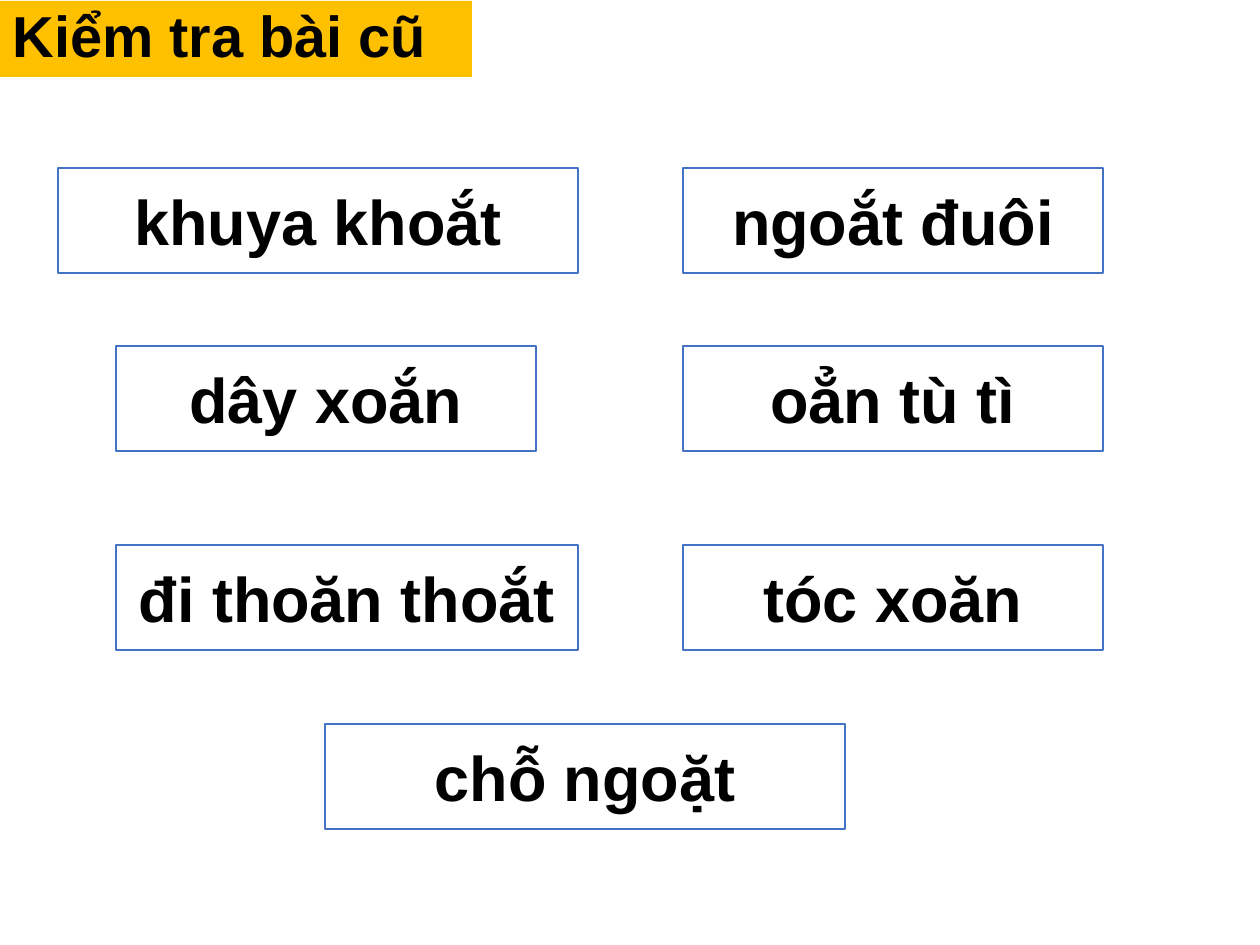
from pptx import Presentation
from pptx.dml.color import RGBColor
from pptx.enum.shapes import MSO_SHAPE
from pptx.enum.text import MSO_ANCHOR, PP_ALIGN
from pptx.util import Emu, Pt

PX_PER_INCH = 126
WORD_HEIGHT = 105
RIGHT_COLUMN = 683
ROW_TOPS = (168, 346, 545)
LEFT_WORDS = (("khuya khoắt", 58, 520), ("dây xoắn", 116, 420), ("đi thoăn thoắt", 116, 462))
RIGHT_WORDS = ("ngoắt đuôi", "oẳn tù tì", "tóc xoăn")

TITLE_FORMAT = {"alignment": PP_ALIGN.LEFT, "line_spacing": 0.9}
WORD_FORMAT = {"alignment": PP_ALIGN.CENTER}


def px(length):
    return Emu(round(length * 914400 / PX_PER_INCH))


def color(hex_value):
    return RGBColor.from_string(hex_value)


def apply_format(target, values):
    for name, value in values.items():
        setattr(target, name, value)


def add_box(slide, text, bounds, fill, size, paragraph_format, anchor):
    """Add a filled rectangle without a line, holding one bold paragraph."""
    box = slide.shapes.add_shape(MSO_SHAPE.RECTANGLE, *map(px, bounds))
    box.shadow.inherit = False
    box.fill.solid()
    box.fill.fore_color.rgb = color(fill)
    box.line.fill.background()
    apply_format(box.text_frame, {"word_wrap": True, "vertical_anchor": anchor})
    paragraph = box.text_frame.paragraphs[0]
    apply_format(paragraph, paragraph_format)
    run = paragraph.add_run()
    run.text = text
    apply_format(run.font, {"name": "Arial", "size": Pt(size), "bold": True})
    run.font.color.rgb = color("000000")
    return box


def add_title(slide, text):
    add_box(slide, text, (0, 1, 472, 76), "FFC000", 33, TITLE_FORMAT, MSO_ANCHOR.TOP)


def add_word(slide, text, left, top, width):
    card = add_box(slide, text, (left, top, width, WORD_HEIGHT), "FFFFFF", 36,
                   WORD_FORMAT, MSO_ANCHOR.MIDDLE)
    card.line.color.rgb = color("4472C4")
    card.line.width = Pt(1)


def main():
    presentation = Presentation()
    apply_format(presentation, {"slide_width": px(1260), "slide_height": px(945)})
    slide = presentation.slides.add_slide(presentation.slide_layouts[6])

    add_title(slide, "Kiểm tra bài cũ")
    for (word, left, width), top in zip(LEFT_WORDS, ROW_TOPS):
        add_word(slide, word, left, top, width)
    for word, top in zip(RIGHT_WORDS, ROW_TOPS):
        add_word(slide, word, RIGHT_COLUMN, top, 420)
    add_word(slide, "chỗ ngoặt", 325, 724, 520)

    presentation.save("out.pptx")


if __name__ == "__main__":
    main()
